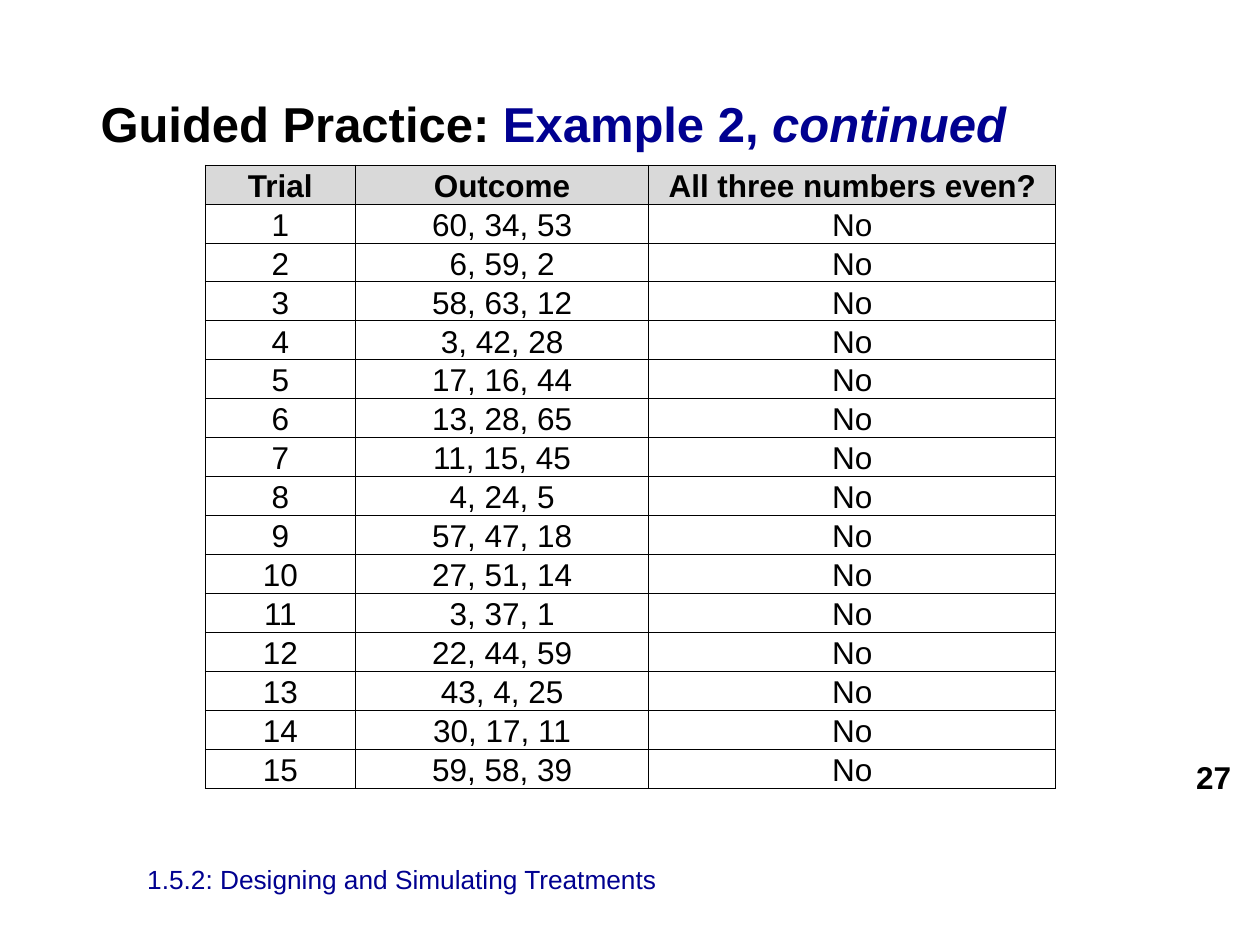
import pptx
import pptx.util
import pptx.dml.color
import pptx.enum.text
import pptx.oxml
import pptx.oxml.ns
from pptx.util import Inches

# Content
COLORS = {"black": "000000", "navy": "000090", "header": "D9D9D9", "white": "FFFFFF"}
FONT = "Arial"
TITLE = [  # text, color, italic
    ("Guided Practice: ", "black", False),
    ("Example 2, ", "navy", False),
    ("continued", "navy", True),
]
PAGE_NUMBER = "27"
FOOTER = "1.5.2: Designing and Simulating Treatments"
HEADERS = ("Trial", "Outcome", "All three numbers even?")
OUTCOMES = [
    "60, 34, 53", "6, 59, 2", "58, 63, 12", "3, 42, 28", "17, 16, 44",
    "13, 28, 65", "11, 15, 45", "4, 24, 5", "57, 47, 18", "27, 51, 14",
    "3, 37, 1", "22, 44, 59", "43, 4, 25", "30, 17, 11", "59, 58, 39",
]
ROWS = [HEADERS] + [(str(trial), outcome, "No") for trial, outcome in enumerate(OUTCOMES, 1)]
COLUMN_WIDTHS = (1.19, 2.33, 3.23)
TABLE_HEIGHT = 4.95
BORDER_WIDTH = 0.5

ALIGN = pptx.enum.text.PP_ALIGN
ANCHOR = pptx.enum.text.MSO_ANCHOR


def rgb(name):
    return pptx.dml.color.RGBColor.from_string(COLORS[name])


def style_font(font, size, color, bold=False, italic=False):
    font.name = FONT
    font.size = pptx.util.Pt(size)
    font.color.rgb = rgb(color)
    font.bold = bold
    font.italic = italic


def add_text(slide, box, runs, size, bold=False, align=ALIGN.LEFT, anchor=ANCHOR.MIDDLE):
    frame = slide.shapes.add_textbox(*map(Inches, box)).text_frame
    frame.word_wrap = True
    frame.vertical_anchor = anchor
    paragraph = frame.paragraphs[0]
    paragraph.alignment = align
    for text, color, italic in runs:
        run = paragraph.add_run()
        run.text = text
        style_font(run.font, size, color, bold, italic)
    return frame


def add_borders(cell):
    properties = cell._tc.get_or_add_tcPr()
    for position, side in enumerate(("lnL", "lnR", "lnT", "lnB")):
        line = pptx.oxml.parse_xml(
            f'<a:{side} {pptx.oxml.ns.nsdecls("a")} w="{pptx.util.Pt(BORDER_WIDTH)}">'
            f'<a:solidFill><a:srgbClr val="{COLORS["black"]}"/></a:solidFill></a:{side}>'
        )
        properties.insert(position, line)


def add_trials_table(slide):
    frame = slide.shapes.add_table(
        len(ROWS), len(HEADERS), Inches(1.63), Inches(1.31),
        Inches(sum(COLUMN_WIDTHS)), Inches(TABLE_HEIGHT),
    )
    table = frame.table
    for column, width in zip(table.columns, COLUMN_WIDTHS):
        column.width = Inches(width)
    for row_index, values in enumerate(ROWS):
        is_header = row_index == 0
        for column_index, value in enumerate(values):
            cell = table.cell(row_index, column_index)
            cell.fill.solid()
            cell.fill.fore_color.rgb = rgb("header" if is_header else "white")
            cell.margin_left = cell.margin_right = Inches(0.01)
            cell.margin_top = cell.margin_bottom = 0
            cell.vertical_anchor = ANCHOR.BOTTOM
            cell.text_frame.text = value
            paragraph = cell.text_frame.paragraphs[0]
            paragraph.alignment = ALIGN.CENTER
            style_font(paragraph.runs[0].font, 18, "black", bold=is_header)
            add_borders(cell)


def main():
    presentation = pptx.Presentation()
    presentation.slide_width = Inches(10)
    presentation.slide_height = Inches(7.5)
    slide = presentation.slides.add_slide(presentation.slide_layouts[6])

    # Title
    title = add_text(slide, (0.7, 0.64, 8.87, 5.7), TITLE, 28, bold=True, anchor=ANCHOR.TOP)
    title.margin_top = Inches(0.1)

    # Page number and footer
    add_text(slide, (9.07, 6.01, 0.8, 0.31), [(PAGE_NUMBER, "black", False)], 18,
             bold=True, align=ALIGN.RIGHT)
    add_text(slide, (1.07, 6.83, 6.28, 0.29), [(FOOTER, "navy", False)], 15)

    # Trials
    add_trials_table(slide)

    presentation.save("out.pptx")


if __name__ == "__main__":
    main()
